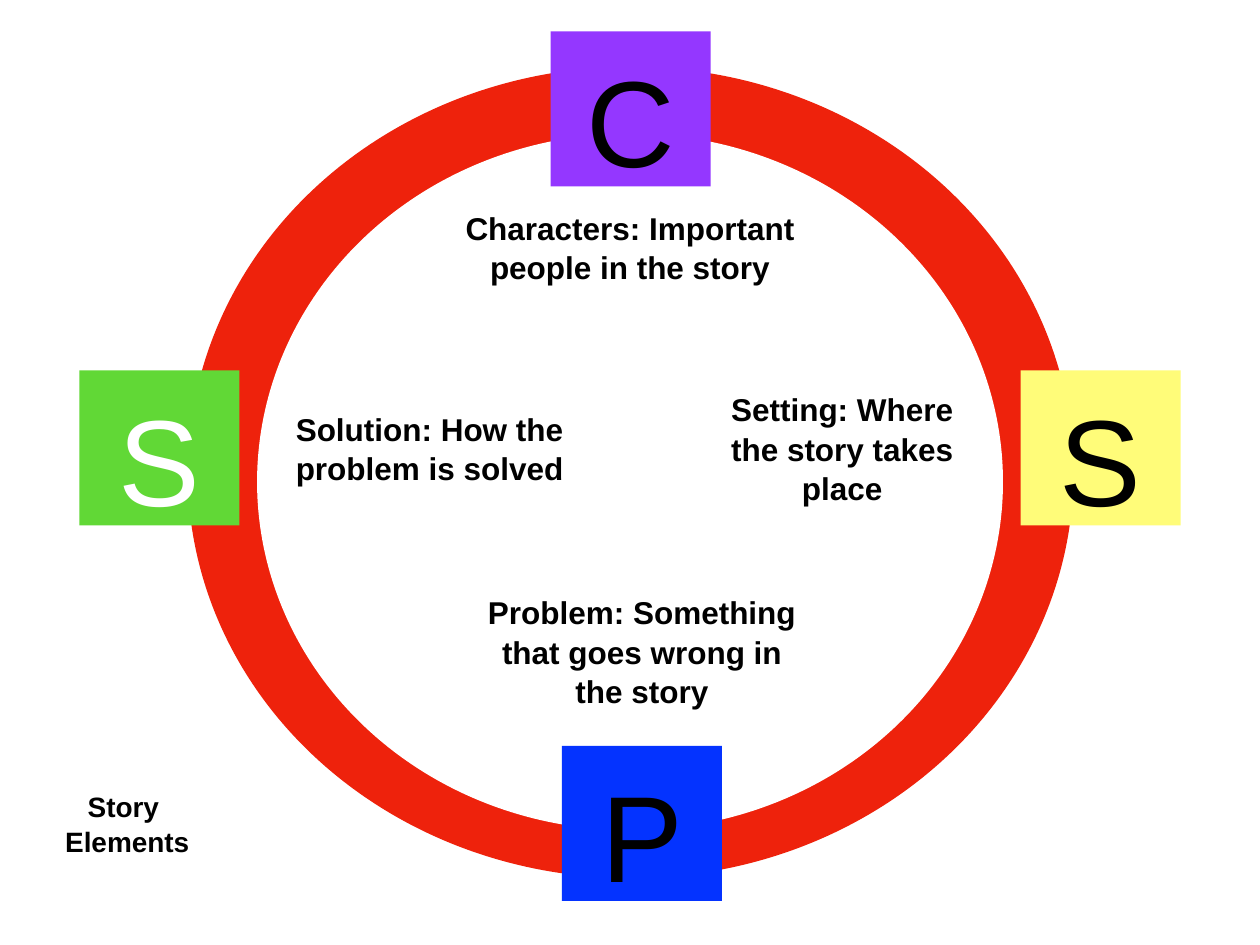
"""Draw a story elements ring with four lettered squares and their meanings."""
from dataclasses import dataclass

from pptx import Presentation
from pptx.dml.color import RGBColor
from pptx.enum.shapes import MSO_SHAPE
from pptx.enum.text import MSO_ANCHOR, PP_ALIGN
from pptx.shapes.autoshape import Shape
from pptx.slide import Slide
from pptx.util import Inches, Pt

OVAL, RECT = MSO_SHAPE.OVAL, MSO_SHAPE.RECTANGLE
MIDDLE, CENTER = MSO_ANCHOR.MIDDLE, PP_ALIGN.CENTER
RED = RGBColor(0xEE, 0x22, 0x0C)
WHITE = RGBColor(0xFF, 0xFF, 0xFF)
BLACK = RGBColor(0, 0, 0)
PURPLE = RGBColor(0x94, 0x37, 0xFF)
BLUE = RGBColor(0x04, 0x33, 0xFF)
GREEN = RGBColor(0x61, 0xD8, 0x36)
YELLOW = RGBColor(0xFF, 0xFC, 0x79)
FONT = "Arial"
PAD = 0.04
DROP = 0.11


@dataclass
class Box:
    left: float
    top: float
    width: float
    height: float

    def place(self) -> list[int]:
        return [Inches(n) for n in (self.left, self.top, self.width, self.height)]


@dataclass
class Tile:
    letter: str
    left: float
    top: float
    fill: RGBColor
    ink: RGBColor = BLACK

    def box(self) -> Box:
        return Box(self.left, self.top, 1.27, 1.23)


@dataclass
class Note:
    text: str
    box: Box
    size: int = 18
    wrap: bool = True


RINGS = [
    (Box(1.49, 0.53, 7.03, 6.44), RED),
    (Box(2.04, 1.06, 5.92, 5.53), WHITE),
]
TILES = [
    Tile("C", 4.37, 0.25, PURPLE),
    Tile("P", 4.46, 5.92, BLUE),
    Tile("S", 0.63, 2.94, GREEN, WHITE),
    Tile("S", 8.1, 2.94, YELLOW),
]
NOTES = [
    Note("Characters: Important people in the story", Box(3.34, 1.6, 3.32, 0.71)),
    Note("Solution: How the problem is solved", Box(2.24, 3.2, 2.34, 0.71)),
    Note("Setting: Where the story takes place", Box(5.57, 3.04, 2.23, 1.03)),
    Note("Problem: Something that goes wrong in the story", Box(3.82, 4.65, 2.55, 1.03)),
    Note("Story \nElements", Box(0.47, 6.23, 1.08, 0.6), 16, False),
]


def add_form(slide: Slide, kind: MSO_SHAPE, box: Box, fill: RGBColor) -> Shape:
    form = slide.shapes.add_shape(kind, *box.place())
    form.shadow.inherit = False
    form.fill.solid()
    form.fill.fore_color.rgb = fill
    form.line.fill.background()
    return form


def set_text(form: Shape, text: str, size: int, ink: RGBColor, bold: bool) -> None:
    frame = form.text_frame
    frame.text = text
    frame.word_wrap = True
    frame.vertical_anchor = MIDDLE
    frame.margin_left = frame.margin_right = Inches(PAD)
    frame.margin_top = frame.margin_bottom = Inches(PAD)
    for para in frame.paragraphs:
        para.alignment = CENTER
        para.line_spacing = 1.04
        for run in para.runs:
            run.font.name = FONT
            run.font.size = Pt(size)
            run.font.bold = bold
            run.font.color.rgb = ink


def add_tile(slide: Slide, tile: Tile) -> None:
    form = add_form(slide, RECT, tile.box(), tile.fill)
    set_text(form, tile.letter, 70, tile.ink, False)
    form.text_frame.margin_top = Inches(PAD + DROP)


def add_note(slide: Slide, note: Note) -> None:
    form = slide.shapes.add_textbox(*note.box.place())
    set_text(form, note.text, note.size, BLACK, True)
    form.text_frame.word_wrap = note.wrap


def main() -> None:
    deck = Presentation()
    deck.slide_width, deck.slide_height = Inches(10), Inches(7.5)
    slide = deck.slides.add_slide(deck.slide_layouts[6])
    for box, fill in RINGS:
        add_form(slide, OVAL, box, fill)
    for tile in TILES:
        add_tile(slide, tile)
    for note in NOTES:
        add_note(slide, note)
    deck.save("out.pptx")


if __name__ == "__main__":
    main()
